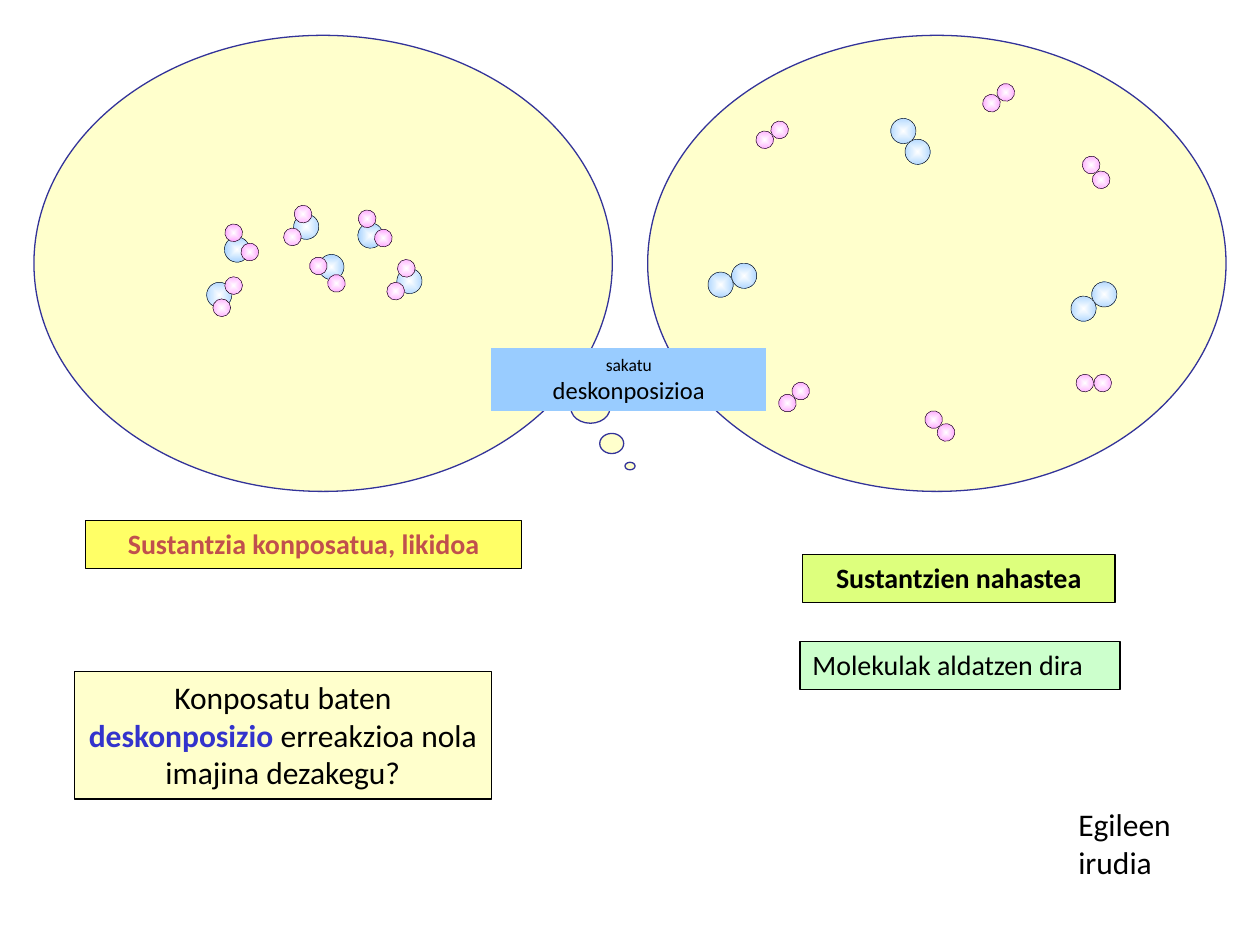
from dataclasses import dataclass
from math import cos, radians, sin

from pptx import Presentation
from pptx import util as u
from pptx.dml.color import RGBColor
from pptx.enum import shapes, text
from pptx.oxml import ns, parse_xml


@dataclass(frozen=True)
class Theme:
    font: str = "Calibri"
    black: str = "000000"
    white: str = "FFFFFF"
    cream: str = "FFFFCC"
    navy: str = "333399"
    blue: str = "99CCFF"
    pink: str = "FF99FF"
    yellow: str = "FFFF66"
    lime: str = "DDFF7D"
    mint: str = "CCFFCC"
    red: str = "C0504D"
    accent: str = "3333CC"
    hint: float = 10
    button: float = 14
    label: float = 16
    body: float = 18
    outline: float = 0.75
    atom_outline: float = 0.25


THEME = Theme()
SHAPE = shapes.MSO_SHAPE
LEFT, CENTER = text.PP_ALIGN.LEFT, text.PP_ALIGN.CENTER


@dataclass(frozen=True)
class Frame:
    left: float
    top: float
    width: float
    height: float

    def lengths(self) -> list:
        return [u.Pt(v) for v in (self.left, self.top, self.width, self.height)]


@dataclass(frozen=True)
class Atom:
    """An atom, placed by its centre relative to the molecule's first atom."""
    size: float
    color: str
    dx: float = 0
    dy: float = 0


@dataclass(frozen=True)
class Molecule:
    atoms: tuple
    x: float
    y: float
    rotation: float


@dataclass(frozen=True)
class Span:
    text: str
    color: str = THEME.black
    bold: bool = False


@dataclass(frozen=True)
class Para:
    spans: tuple
    size: float
    align: text.PP_ALIGN = CENTER


@dataclass(frozen=True)
class Label:
    frame: Frame
    fill: str
    para: Para


# Molecule kinds, in their unrotated position
BIG, SMALL = 14.4, 10.1
WATER = (Atom(BIG, THEME.blue), Atom(SMALL, THEME.pink, 0.3, 9.8),
         Atom(SMALL, THEME.pink, -7, -2.6))
OXYGEN = (Atom(BIG, THEME.blue), Atom(BIG, THEME.blue, BIG))
HYDROGEN = (Atom(SMALL, THEME.pink), Atom(SMALL, THEME.pink, 5.8, -8.4))

MOLECULES = [
    Molecule(WATER, 234, 160.6, 55.5),
    Molecule(WATER, 135.4, 142.6, 170.6),
    Molecule(WATER, 125.3, 168.5, 238.8),
    Molecule(WATER, 211.7, 134.6, 170.6),
    Molecule(WATER, 189.4, 152.6, 344.4),
    Molecule(WATER, 175, 129.6, 55.5),
    Molecule(HYDROGEN, 437, 79.9, 21.8),
    Molecule(OXYGEN, 516.2, 74.9, 55.5),
    Molecule(OXYGEN, 411.8, 162.7, 339.3),
    Molecule(OXYGEN, 619.2, 176.4, 325.5),
    Molecule(HYDROGEN, 623.5, 94.3, 111.4),
    Molecule(HYDROGEN, 566.6, 59, 18.1),
    Molecule(HYDROGEN, 533.5, 239.8, 101.5),
    Molecule(HYDROGEN, 450, 230.4, 13.3),
    Molecule(HYDROGEN, 619.9, 218.9, 55.5),
]

# Two large ovals and the trail of thought bubbles
BUBBLES = [
    Frame(370.1, 20.2, 330.5, 260.6),
    Frame(19.4, 20.2, 330.5, 260.6),
    Frame(326.2, 224.6, 22.3, 17.3),
    Frame(357.1, 264.2, 5.8, 4.3),
    Frame(342.7, 247.7, 13.7, 11.5),
]

LABELS = [
    Label(Frame(457.2, 366.5, 182.9, 27.4), THEME.mint,
          Para((Span("Molekulak aldatzen dira"),), THEME.label, LEFT)),
    Label(Frame(49, 297.4, 249.1, 27.4), THEME.yellow,
          Para((Span("Sustantzia konposatua, likidoa", THEME.red, True),), THEME.label)),
    Label(Frame(458.6, 316.8, 178.6, 27.4), THEME.lime,
          Para((Span("Sustantzien nahastea", bold=True),), THEME.label)),
    Label(Frame(42.5, 383.8, 238.3, 72.7), THEME.cream,
          Para((Span("Konposatu baten "),
                Span("deskonposizio", THEME.accent, True),
                Span(" erreakzioa nola imajina dezakegu?")), THEME.body)),
]


def add_figure(parent, kind, frame: Frame, fill: str, line: str = "",
               weight: float = THEME.outline):
    figure = parent.shapes.add_shape(kind, *frame.lengths())
    figure.shadow.inherit = False
    figure.fill.solid()
    figure.fill.fore_color.rgb = RGBColor.from_string(fill)
    if line:
        figure.line.color.rgb = RGBColor.from_string(line)
        figure.line.width = u.Pt(weight)
    else:
        figure.line.fill.background()
    return figure


def shade_from_center(figure, color: str) -> None:
    figure.fill.gradient()
    for stop, shade in zip(figure.fill.gradient_stops, (THEME.white, color)):
        stop.color.rgb = RGBColor.from_string(shade)
    gradient = figure.element.spPr.find(ns.qn("a:gradFill"))
    linear = gradient.find(ns.qn("a:lin"))
    gradient.replace(linear, parse_xml(
        f'<a:path {ns.nsdecls("a")} path="shape">'
        '<a:fillToRect l="50000" t="50000" r="50000" b="50000"/></a:path>'))


def add_molecule(page, molecule: Molecule) -> None:
    group = page.shapes.add_group_shape()
    turn = radians(molecule.rotation)
    for atom in molecule.atoms:
        x = molecule.x + atom.dx * cos(turn) - atom.dy * sin(turn)
        y = molecule.y + atom.dx * sin(turn) + atom.dy * cos(turn)
        frame = Frame(x - atom.size / 2, y - atom.size / 2, atom.size, atom.size)
        ball = add_figure(group, SHAPE.OVAL, frame, atom.color, THEME.black,
                          THEME.atom_outline)
        ball.rotation = molecule.rotation
        shade_from_center(ball, atom.color)


def write(box, paras: list, anchor=text.MSO_ANCHOR.TOP) -> None:
    frame = box.text_frame
    frame.word_wrap = True
    frame.auto_size = text.MSO_AUTO_SIZE.SHAPE_TO_FIT_TEXT
    frame.vertical_anchor = anchor
    for index, content in enumerate(paras):
        para = frame.add_paragraph() if index else frame.paragraphs[0]
        para.alignment = content.align
        para.font.name = THEME.font
        para.font.size = u.Pt(content.size)
        para.font.color.rgb = RGBColor.from_string(content.spans[0].color)
        para.font.bold = content.spans[0].bold
        for span in content.spans:
            run = para.add_run()
            run.text = span.text
            if span != content.spans[0] and len(content.spans) > 1:
                run.font.color.rgb = RGBColor.from_string(span.color)
                run.font.bold = span.bold


def main() -> None:
    deck = Presentation()
    deck.slide_width, deck.slide_height = u.Pt(720), u.Pt(540)
    page = deck.slides.add_slide(deck.slide_layouts[6])

    # Ovals and molecules
    for bubble in BUBBLES:
        add_figure(page, SHAPE.OVAL, bubble, THEME.cream, THEME.navy)
    for molecule in MOLECULES:
        add_molecule(page, molecule)

    # Labels
    for label in LABELS:
        box = add_figure(page, SHAPE.RECTANGLE, label.frame, label.fill, THEME.black)
        write(box, [label.para])

    # Button
    button = add_figure(page, SHAPE.ACTION_BUTTON_CUSTOM,
                        Frame(280.8, 198.7, 157, 36), THEME.blue)
    write(button, [Para((Span("sakatu"),), THEME.hint),
                   Para((Span("deskonposizioa"),), THEME.button)],
          text.MSO_ANCHOR.MIDDLE)

    # Credit
    credit = page.shapes.add_textbox(*Frame(609.1, 456.5, 110.9, 51.1).lengths())
    write(credit, [Para((Span("Egileen irudia"),), THEME.body, LEFT)])

    deck.save("out.pptx")


if __name__ == "__main__":
    main()
